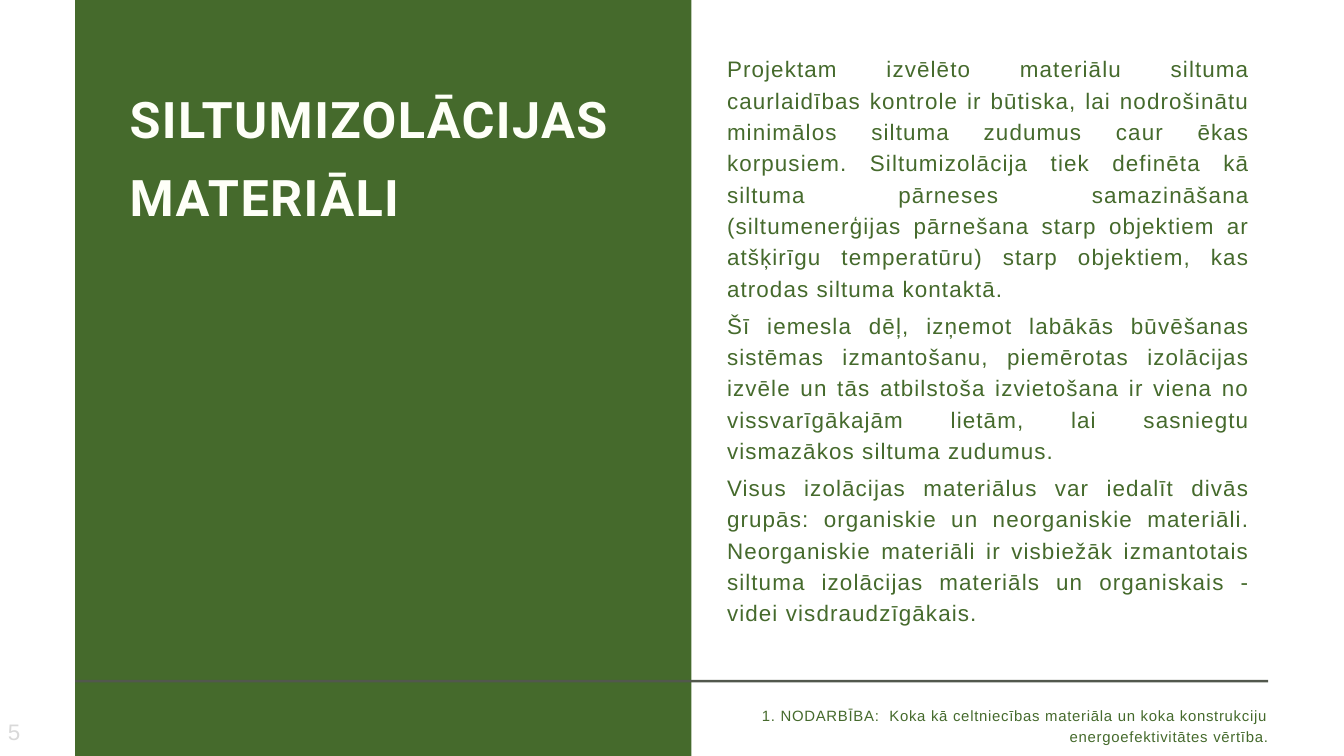
import pptx
import pptx.util
import pptx.dml.color
import pptx.enum.shapes
import pptx.enum.text

Cm = pptx.util.Cm
Pt = pptx.util.Pt
RGBColor = pptx.dml.color.RGBColor
Align = pptx.enum.text.PP_ALIGN
Anchor = pptx.enum.text.MSO_ANCHOR

GREEN = RGBColor(0x45, 0x6A, 0x2C)
DARK_GREY = RGBColor(0x52, 0x58, 0x4D)
LIGHT_GREY = RGBColor(0xD9, 0xD9, 0xD9)
CREAM = RGBColor(0xFE, 0xFF, 0xF8)

TITLE = "SILTUMIZOLĀCIJAS MATERIĀLI"
BODY = [
    "Projektam izvēlēto materiālu siltuma caurlaidības kontrole ir būtiska, "
    "lai nodrošinātu minimālos siltuma zudumus caur ēkas korpusiem. "
    "Siltumizolācija tiek definēta kā siltuma pārneses samazināšana "
    "(siltumenerģijas pārnešana starp objektiem ar atšķirīgu temperatūru) "
    "starp objektiem, kas atrodas siltuma kontaktā.",
    "Šī iemesla dēļ, izņemot labākās būvēšanas sistēmas izmantošanu, "
    "piemērotas izolācijas izvēle un tās atbilstoša izvietošana ir viena no "
    "vissvarīgākajām lietām, lai sasniegtu vismazākos siltuma zudumus.",
    "Visus izolācijas materiālus var iedalīt divās grupās: organiskie un "
    "neorganiskie materiāli. Neorganiskie materiāli ir visbiežāk izmantotais "
    "siltuma izolācijas materiāls un organiskais - videi visdraudzīgākais.",
]
FOOTER = ("1. NODARBĪBA:  Koka kā celtniecības materiāla un koka konstrukciju "
          "energoefektivitātes vērtība.")
PAGE_NUMBER = "5"

BODY_BOX = (27.48, 1.93, 19.76, 25.91)
PANEL_BOX = (2.84, -0.94, 23.29, 30.43)
FOOTER_BOX = (26.82, 26.59, 21.13, 2.29)
RULE_BOX = (2.84, 25.7, 45.09, 0.1)
TITLE_BOX = (4.9, 2.67, 19.2, 8.89)
NUMBER_BOX = (0.05, 27.15, 5.92, 1.02)


def add_block(slide, box, color):
    shape = slide.shapes.add_shape(
        pptx.enum.shapes.MSO_SHAPE.RECTANGLE, *map(Cm, box))
    shape.shadow.inherit = False
    shape.fill.solid()
    shape.fill.fore_color.rgb = color
    shape.line.fill.background()


def write(shape, texts, size, color, tracking, font="Arial", bold=False,
          align=Align.LEFT, line=None, after=0, anchor=Anchor.TOP, inset=0):
    frame = shape.text_frame
    frame.word_wrap = True
    frame.auto_size = pptx.enum.text.MSO_AUTO_SIZE.NONE
    frame.vertical_anchor = anchor
    frame.margin_left = frame.margin_right = Cm(inset)
    frame.margin_top = frame.margin_bottom = 0
    frame.text = "\n".join(texts)
    for paragraph in frame.paragraphs:
        paragraph.alignment = align
        paragraph.space_before = Pt(0)
        paragraph.space_after = Pt(after)
        if line:
            paragraph.line_spacing = Pt(line)
        paragraph.font.name = font
        paragraph.font.size = Pt(size)
        paragraph.font.bold = bold
        paragraph.font.color.rgb = color
        for run in paragraph.runs:
            run.font._element.set("spc", str(round(tracking * 100)))


def add_text(slide, box, texts, *style, **options):
    write(slide.shapes.add_textbox(*map(Cm, box)), texts, *style, **options)


def main():
    presentation = pptx.Presentation()
    presentation.slide_width = Cm(50.8)
    presentation.slide_height = Cm(28.58)
    slide = presentation.slides.add_slide(presentation.slide_layouts[5])

    add_text(slide, BODY_BOX, BODY, 24, GREEN, 1.2,
             align=Align.JUSTIFY, line=33.6, after=6)
    add_block(slide, PANEL_BOX, GREEN)
    add_text(slide, FOOTER_BOX, [FOOTER], 16, GREEN, 0.8,
             align=Align.RIGHT, line=22.4)
    add_block(slide, RULE_BOX, DARK_GREY)

    title = slide.shapes.title
    title.left, title.top, title.width, title.height = map(Cm, TITLE_BOX)
    write(title, [TITLE], 54, CREAM, 1.5, font="Roboto", bold=True, line=83.7)
    slide.shapes._spTree.append(title._element)

    add_text(slide, NUMBER_BOX, [PAGE_NUMBER], 24, LIGHT_GREY, 1.2,
             anchor=Anchor.MIDDLE, inset=0.25)
    presentation.save("out.pptx")


if __name__ == "__main__":
    main()
